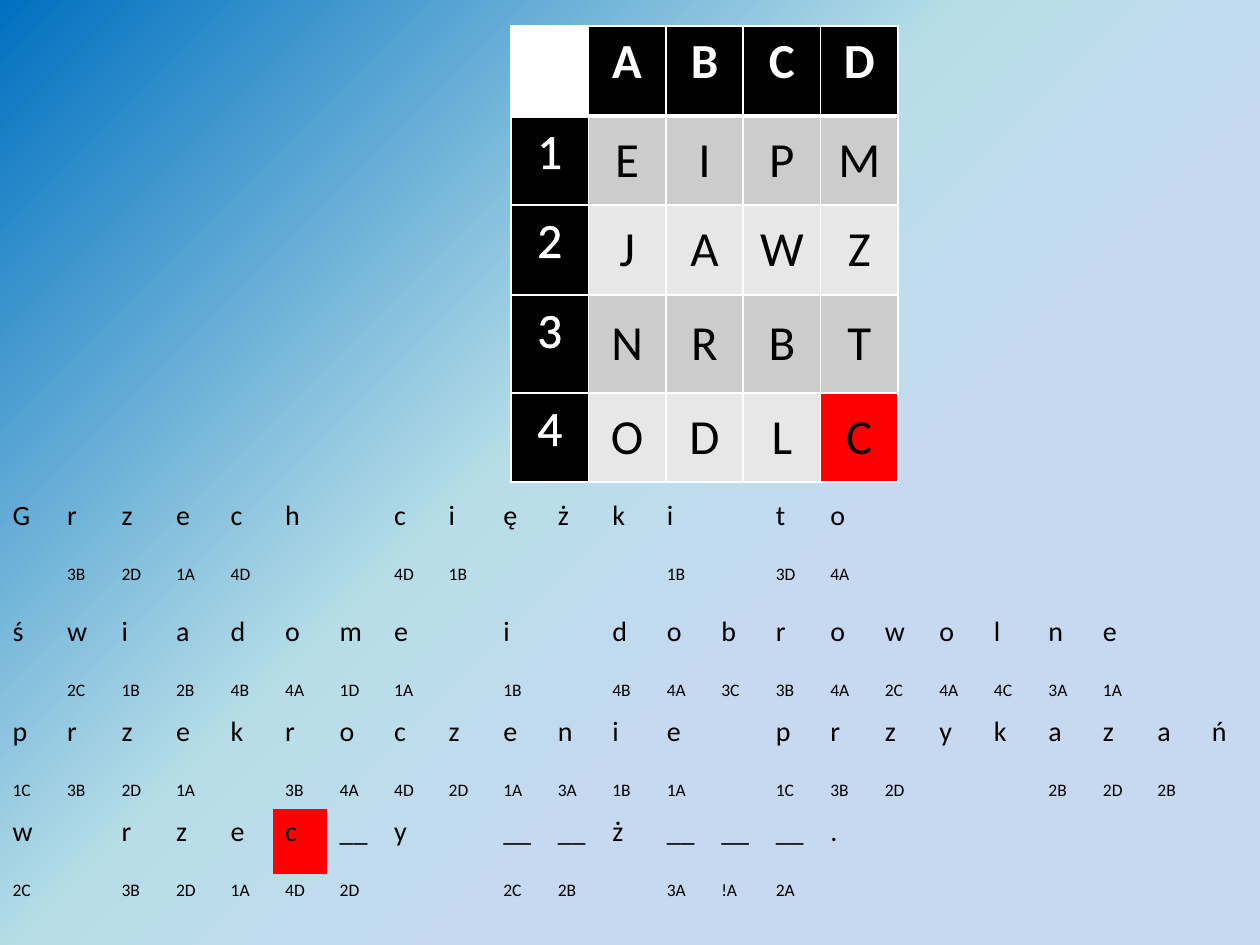
from lxml import etree
from pptx import Presentation
from pptx import util as u
from pptx.dml.color import RGBColor
from pptx.enum import text
from pptx.oxml.ns import qn

PX = 914400 // 126
FONT = "Calibri"
BLACK, WHITE, RED = "000000", "FFFFFF", "FF0000"
NO_STYLE = "{2D5ABB26-0587-4C30-8999-92F81FD0307C}"

BACKGROUND = [(0, "0070C0"), (44, "B7DEE8"), (64, "C6D9F1"), (100, "C6D9F1")]

KEY_ROWS = [" ABCD", "1EIPM", "2JAWZ", "3NRBT", "4ODLC"]
KEY_HEIGHTS = [90, 89, 90, 98, 89]
KEY_BANDS = ["CCCCCC", "E7E7E7"]
KEY_MARKED = (4, 4)

# One letter per column; "_" is a blank to fill in, "-" a column without code
PUZZLE = [
    ("Grzech ciężki to",
     "- 3B 2D 1A 4D - - 4D 1B - - - 1B - 3D 4A"),
    ("świadome i dobrowolne",
     "- 2C 1B 2B 4B 4A 1D 1A - 1B - 4B 4A 3C 3B 4A 2C 4A 4C 3A 1A"),
    ("przekroczenie przykazań",
     "1C 3B 2D 1A - 3B 4A 4D 2D 1A 3A 1B 1A - 1C 3B 2D - - 2B 2D 2B"),
    ("w rzec_y __ż___.",
     "2C - 3B 2D 1A 4D 2D - - 2C 2B - 3A !A 2A"),
]
PUZZLE_COLUMNS = 23
PUZZLE_HEIGHTS = [65, 51, 65, 35, 65, 35, 65, 35]
PUZZLE_MARKED = (6, 5)


def px(n):
    return u.Emu(n * PX)


def color(hex_value):
    return RGBColor.from_string(hex_value)


def add_line(parent, tag, points, hex_value, index=None):
    line = etree.Element(qn(tag), w=str(u.Pt(points)))
    fill = etree.SubElement(line, qn("a:solidFill"))
    etree.SubElement(fill, qn("a:srgbClr"), val=hex_value)
    parent.insert(len(parent) if index is None else index, line)


def paint_background(slide, stops):
    fill = slide.background.fill
    fill.gradient()
    fill.gradient_angle = 315
    stop_list = next(slide.element.iter(qn("a:gsLst")))
    for old in list(stop_list):
        stop_list.remove(old)
    for position, hex_value in stops:
        stop = etree.SubElement(stop_list, qn("a:gs"), pos=str(position * 1000))
        etree.SubElement(stop, qn("a:srgbClr"), val=hex_value)


def add_plain_table(slide, box, columns, heights):
    left, top, width, height = (px(n) for n in box)
    table = slide.shapes.add_table(len(heights), columns, left, top, width, height).table
    next(table._tbl.iter(qn("a:tableStyleId"))).text = NO_STYLE
    table.first_row = table.horz_banding = False
    for column in table.columns:
        column.width = u.Emu(width // columns)
    for row, row_height in zip(table.rows, heights):
        row.height = px(row_height)
    return table


def write_cell(cell, words, size, hex_value=BLACK, fill=None, **font_format):
    if fill:
        cell.fill.solid()
        cell.fill.fore_color.rgb = color(fill)
    paragraph = cell.text_frame.paragraphs[0]
    if not words:
        # Keeps an empty cell from stretching its row
        paragraph._p.get_or_add_endParaRPr().set("sz", str(size * 100))
        return
    run = paragraph.add_run()
    run.text = words
    run.font.color.rgb = color(hex_value)
    for name, value in dict(name=FONT, size=u.Pt(size), **font_format).items():
        setattr(run.font, name, value)


def border_cell(cell, row):
    widths = {"a:lnL": 1, "a:lnR": 1,
              "a:lnT": 3 if row == 1 else 1,
              "a:lnB": 3 if row == 0 else 1}
    properties = cell._tc.get_or_add_tcPr()
    for index, (tag, points) in enumerate(widths.items()):
        add_line(properties, tag, points, WHITE, index)


def build_key(slide, box):
    """Grid of letters with column and row headings."""
    table = add_plain_table(slide, box, len(KEY_ROWS[0]), KEY_HEIGHTS)
    for r, letters in enumerate(KEY_ROWS):
        for c, letter in enumerate(letters):
            cell = table.cell(r, c)
            if r == 0 or c == 0:
                fill = BLACK if r or c else WHITE
                write_cell(cell, letter.strip(), 28, WHITE, fill, bold=r == 0)
            else:
                fill = RED if (r, c) == KEY_MARKED else KEY_BANDS[(r - 1) % 2]
                write_cell(cell, letter, 28, BLACK, fill)
                cell.vertical_anchor = text.MSO_ANCHOR.MIDDLE
            paragraph = cell.text_frame.paragraphs[0]
            paragraph.alignment = text.PP_ALIGN.CENTER
            if r and c == 0:
                # Outlined row numbers
                add_line(paragraph.runs[0].font._element, "a:ln", 0.75, WHITE, 0)
            border_cell(cell, r)


def build_puzzle(slide, box):
    """Sentence to decode: a row of letters over a row of codes."""
    table = add_plain_table(slide, box, PUZZLE_COLUMNS, PUZZLE_HEIGHTS)
    for line, (sentence, codes) in enumerate(PUZZLE):
        letters = [ch.strip().replace("_", "__") for ch in sentence]
        clues = [code.strip("-") for code in codes.split()]
        for r, entries, size in ((2 * line, letters, 16), (2 * line + 1, clues, 10)):
            entries += [""] * (PUZZLE_COLUMNS - len(entries))
            for c, entry in enumerate(entries):
                fill = RED if (r, c) == PUZZLE_MARKED else None
                write_cell(table.cell(r, c), entry, size, BLACK, fill)


def main():
    deck = Presentation()
    deck.slide_width, deck.slide_height = px(1260), px(945)
    slide = deck.slides.add_slide(deck.slide_layouts[6])
    paint_background(slide, BACKGROUND)
    build_puzzle(slide, (0, 493, 1255, sum(PUZZLE_HEIGHTS)))
    build_key(slide, (511, 26, 387, sum(KEY_HEIGHTS)))
    deck.save("out.pptx")


if __name__ == "__main__":
    main()
